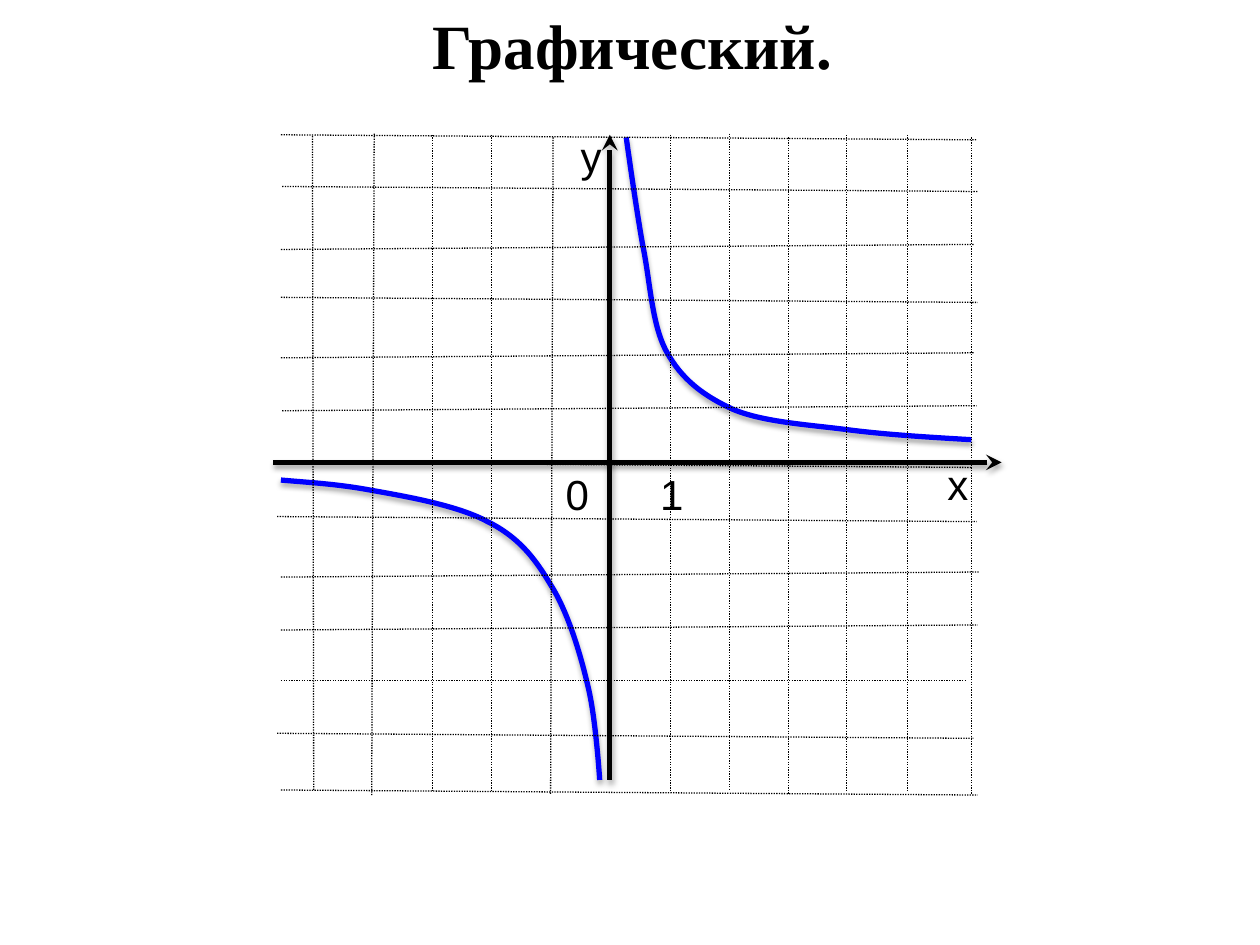
from lxml import etree
from pptx import Presentation
from pptx.dml.color import RGBColor
from pptx.enum.dml import MSO_LINE
from pptx.enum.shapes import MSO_CONNECTOR
from pptx.enum.text import MSO_AUTO_SIZE, PP_ALIGN
from pptx.oxml import parse_xml
from pptx.oxml.ns import nsdecls, qn
from pptx.util import Inches, Pt

BLACK, BLUE = "000000", "0000FF"

# Grid lines, in inches from the plot corner: start x, start y, end x, end y
ROWS = [
    (0.06, 0.01, 5.58, 0.05), (0.07, 0.42, 5.59, 0.46), (0.06, 0.92, 5.56, 0.88),
    (0.06, 1.30, 5.59, 1.34), (0.06, 1.78, 5.56, 1.74), (0.07, 2.20, 5.58, 2.16),
    (0.00, 2.61, 5.54, 2.65), (0.03, 3.04, 5.58, 3.08), (0.06, 3.52, 5.60, 3.48),
    (0.06, 3.94, 5.59, 3.90), (0.06, 4.34, 5.49, 4.34), (0.03, 4.76, 5.56, 4.80),
    (0.06, 5.21, 5.59, 5.25),
]
COLUMNS = [
    (0.31, 0.02, 0.32, 5.21), (0.80, 0.00, 0.78, 5.25), (1.26, 0.01, 1.26, 5.23),
    (1.73, 0.01, 1.73, 5.23), (2.22, 0.03, 2.20, 5.25), (3.15, 0.01, 3.15, 5.23),
    (3.62, 0.00, 3.62, 5.21), (4.09, 0.03, 4.09, 5.24), (4.55, 0.01, 4.55, 5.23),
    (5.03, 0.01, 5.03, 5.23), (5.54, 0.03, 5.54, 5.25),
]
AXES = [(2.67, 5.13, 2.67, 0.01), (0, 2.61, 5.78, 2.61)]

# Hyperbola branches: a start point, then three Bézier points per segment
BRANCHES = [
    [(0.06, 2.75), (0.28, 2.77), (0.50, 2.78), (0.77, 2.83),
     (1.05, 2.88), (1.46, 2.95), (1.70, 3.08),
     (1.94, 3.20), (2.07, 3.36), (2.20, 3.58),
     (2.34, 3.80), (2.44, 4.14), (2.50, 4.40),
     (2.56, 4.65), (2.59, 5.13), (2.59, 5.13)],
    [(2.80, 0.03), (2.84, 0.31), (2.88, 0.59), (2.93, 0.88),
     (2.99, 1.16), (3.00, 1.51), (3.12, 1.73),
     (3.24, 1.95), (3.41, 2.08), (3.65, 2.19),
     (3.89, 2.29), (4.24, 2.31), (4.55, 2.35),
     (4.86, 2.39), (5.20, 2.41), (5.54, 2.43)],
]
# Label, x, y, width, wrap
LABELS = [("х", 5.25, 2.53, 0.37, False), ("у", 2.34, -0.07, 0.37, False),
          ("1", 2.97, 2.61, 0.41, True), ("0", 2.22, 2.61, 0.41, True)]


def color(hex_value):
    return RGBColor.from_string(hex_value)


def set_shadow(shape, visible):
    effects = parse_xml(f"<a:effectLst {nsdecls('a')}/>")
    if visible:
        outer = etree.SubElement(effects, qn("a:outerShdw"), blurRad=str(Pt(3.1)),
                                 dist=str(Pt(1.8)), dir="5400000", rotWithShape="0")
        tint = etree.SubElement(outer, qn("a:srgbClr"), val=BLACK)
        etree.SubElement(tint, qn("a:alpha"), val="35000")
    shape._element.spPr.append(effects)


def add_line(slide, left, top, ends, width, axis=False):
    x1, y1, x2, y2 = ends
    line = slide.shapes.add_connector(
        MSO_CONNECTOR.STRAIGHT, Inches(left + x1), Inches(top + y1),
        Inches(left + x2), Inches(top + y2))
    line.line.color.rgb = color(BLACK)
    line.line.width = Pt(width)
    if axis:
        etree.SubElement(line.line._get_or_add_ln(), qn("a:tailEnd"), type="stealth")
    else:
        line.line.dash_style = MSO_LINE.ROUND_DOT
    set_shadow(line, axis)


def add_curve(slide, left, top, points):
    placed = [(Inches(left + x), Inches(top + y)) for x, y in points]
    builder = slide.shapes.build_freeform(*placed[0])
    builder.add_line_segments(placed[1:], close=False)
    curve = builder.convert_to_shape()
    curve.fill.background()
    curve.line.color.rgb = color(BLUE)
    curve.line.width = Pt(3)
    set_shadow(curve, True)

    # Turn every three straight segments into one Bézier segment
    path = next(curve._element.iter(qn("a:path")))
    segments = path.findall(qn("a:lnTo"))
    for i in range(0, len(segments), 3):
        bezier = etree.SubElement(path, qn("a:cubicBezTo"))
        for segment in segments[i:i + 3]:
            bezier.append(segment[0])
            path.remove(segment)


def add_text(slide, text, box, size, font, wrap=True):
    shape = slide.shapes.add_textbox(*(Inches(v) for v in box))
    frame = shape.text_frame
    frame.text = text
    frame.word_wrap = wrap
    frame.auto_size = MSO_AUTO_SIZE.SHAPE_TO_FIT_TEXT
    run = frame.paragraphs[0].runs[0]
    run.font.size = Pt(size)
    run.font.name = font
    run.font.color.rgb = color(BLACK)
    return frame.paragraphs[0]


def add_title(slide, box):
    title = add_text(slide, "Графический.", box, 36, "Times New Roman")
    title.alignment = PP_ALIGN.CENTER
    run = title.runs[0]
    run.font.bold = True
    outline = parse_xml(f'<a:ln {nsdecls("a")} w="{Pt(0.9)}"><a:solidFill>'
                        f'<a:srgbClr val="{BLACK}"/></a:solidFill></a:ln>')
    run.font._element.insert(0, outline)


def add_plot(slide, left, top):
    # Curve branches
    for points in BRANCHES:
        add_curve(slide, left, top, points)
    # Dotted grid
    for ends in ROWS + COLUMNS:
        add_line(slide, left, top, ends, 0.75)
    # Axes with arrowheads
    for ends in AXES:
        add_line(slide, left, top, ends, 3, axis=True)
    # Axis names and unit marks
    for text, x, y, width, wrap in LABELS:
        add_text(slide, text, (left + x, top + y, width, 0.5), 24, "Arial", wrap)


def main():
    deck = Presentation()
    deck.slide_width, deck.slide_height = Inches(10), Inches(7.5)
    slide = deck.slides.add_slide(deck.slide_layouts[6])
    add_plot(slide, 2.17, 1.06)
    add_title(slide, (0, 0, 10.04, 0.71))
    deck.save("out.pptx")


if __name__ == "__main__":
    main()
